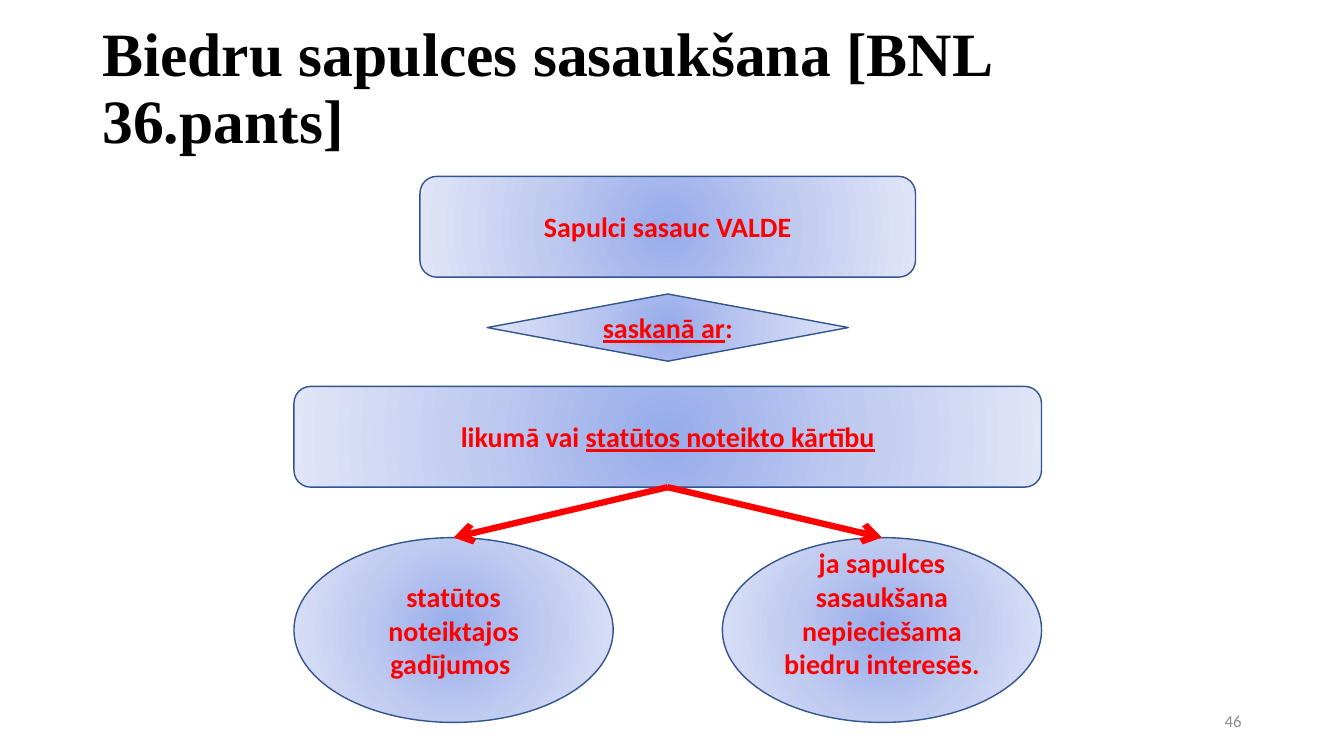
from dataclasses import dataclass

from lxml import etree
from pptx import Presentation
from pptx.dml.color import RGBColor
from pptx.enum.shapes import MSO_CONNECTOR, MSO_SHAPE
from pptx.enum.text import MSO_ANCHOR, PP_ALIGN
from pptx.oxml import parse_xml
from pptx.oxml.ns import nsdecls, qn
from pptx.shapes.autoshape import Shape
from pptx.slide import Slide
from pptx.util import Emu, Pt

BAR = MSO_SHAPE.FLOWCHART_ALTERNATE_PROCESS
DIAMOND = MSO_SHAPE.FLOWCHART_DECISION
OVAL = MSO_SHAPE.FLOWCHART_CONNECTOR
STRAIGHT = MSO_CONNECTOR.STRAIGHT
MIDDLE = MSO_ANCHOR.MIDDLE
LEFT, CENTER, RIGHT = PP_ALIGN.LEFT, PP_ALIGN.CENTER, PP_ALIGN.RIGHT

TOP, BOTTOM = 0, 2
AXIS = 636
COLORS = {
    "title": "000000",
    "number": "8C8C8C",
    "accent": "FF0000",
    "edge": "325491",
    "core": "96ABEA",
    "mid": "C0CBF0",
    "rim": "E0E5F7",
}
STOPS = [(0, "core"), (50, "mid"), (100, "rim")]


@dataclass
class Piece:
    text: str
    line: bool = False


@dataclass
class Font:
    name: str
    size: int
    color: str
    bold: bool = False


@dataclass
class Label:
    box: tuple[int, int, int, int]
    text: str
    font: Font
    align: PP_ALIGN
    space: float = 1.0


@dataclass
class Node:
    kind: MSO_SHAPE
    mid: int
    top: int
    width: int
    height: int
    words: list[Piece]
    foot: int = 5


BODY = Font("Calibri", 20, "accent", True)
LABELS = [
    Label((88, 38, 1104, 96), "Biedru sapulces sasaukšana [BNL 36.pants]",
          Font("Times New Roman", 44, "title", True), LEFT, 0.9),
    Label((904, 667, 288, 38), "46", Font("Calibri", 12, "number"), RIGHT),
]
STEPS = [
    Node(BAR, AXIS, 168, 472, 96, [Piece("Sapulci sasauc VALDE")]),
    Node(DIAMOND, AXIS, 280, 344, 64, [Piece("saskaņā ar", True), Piece(":")]),
    Node(BAR, AXIS, 368, 712, 96,
         [Piece("likumā vai "), Piece("statūtos noteikto kārtību", True)]),
]
CASES = [
    Node(OVAL, AXIS - 204, 512, 304, 176,
         [Piece("statūtos noteiktajos gadījumos ")]),
    Node(OVAL, AXIS + 204, 512, 304, 176,
         [Piece("ja sapulces sasaukšana nepieciešama biedru interesēs.")], 37),
]


def px(size: int) -> Emu:
    return Emu(size * 9525)


def paint(name: str) -> RGBColor:
    return RGBColor.from_string(COLORS[name])


def write(shape: Shape, words: list[Piece], font: Font,
          align: PP_ALIGN, space: float = 1.0) -> None:
    frame = shape.text_frame
    frame.word_wrap = True
    frame.vertical_anchor = MIDDLE
    para = frame.paragraphs[0]
    para.alignment = align
    para.line_spacing = space
    for piece in words:
        run = para.add_run()
        run.text = piece.text
        run.font.name = font.name
        run.font.size = Pt(font.size)
        run.font.bold = font.bold
        run.font.underline = piece.line
        run.font.color.rgb = paint(font.color)


def glow(shape: Shape) -> None:
    stops = "".join(
        f'<a:gs pos="{pos * 1000}"><a:srgbClr val="{COLORS[name]}"/></a:gs>'
        for pos, name in STOPS)
    shape.element.spPr.append(parse_xml(
        f'<a:gradFill {nsdecls("a")} rotWithShape="1"><a:gsLst>{stops}</a:gsLst>'
        '<a:path path="circle"><a:fillToRect l="50000" t="50000" r="50000" '
        'b="50000"/></a:path></a:gradFill>'))


def add_label(slide: Slide, label: Label) -> None:
    shape = slide.shapes.add_textbox(*map(px, label.box))
    write(shape, [Piece(label.text)], label.font, label.align, label.space)


def add_node(slide: Slide, node: Node) -> Shape:
    shape = slide.shapes.add_shape(
        node.kind, px(node.mid - node.width // 2), px(node.top),
        px(node.width), px(node.height))
    glow(shape)
    shape.line.color.rgb = paint("edge")
    shape.line.width = Pt(1)
    shape.shadow.inherit = False
    shape.text_frame.margin_bottom = px(node.foot)
    write(shape, node.words, BODY, CENTER)
    return shape


def add_arrow(slide: Slide, start: Shape, end: Shape) -> None:
    arrow = slide.shapes.add_connector(STRAIGHT, 0, 0, 0, 0)
    arrow.begin_connect(start, BOTTOM)
    arrow.end_connect(end, TOP)
    arrow.line.color.rgb = paint("accent")
    arrow.line.width = Pt(4.5)
    props = arrow.element.spPr
    etree.SubElement(props.find(qn("a:ln")), qn("a:tailEnd"), type="arrow")
    etree.SubElement(props, qn("a:effectLst"))


def main() -> None:
    deck = Presentation()
    deck.slide_width, deck.slide_height = px(1280), px(720)
    slide = deck.slides.add_slide(deck.slide_layouts[6])
    for label in LABELS:
        add_label(slide, label)
    steps = [add_node(slide, node) for node in STEPS]
    cases = [add_node(slide, node) for node in CASES]
    for case in cases:
        add_arrow(slide, steps[-1], case)
    deck.save("out.pptx")


if __name__ == "__main__":
    main()
